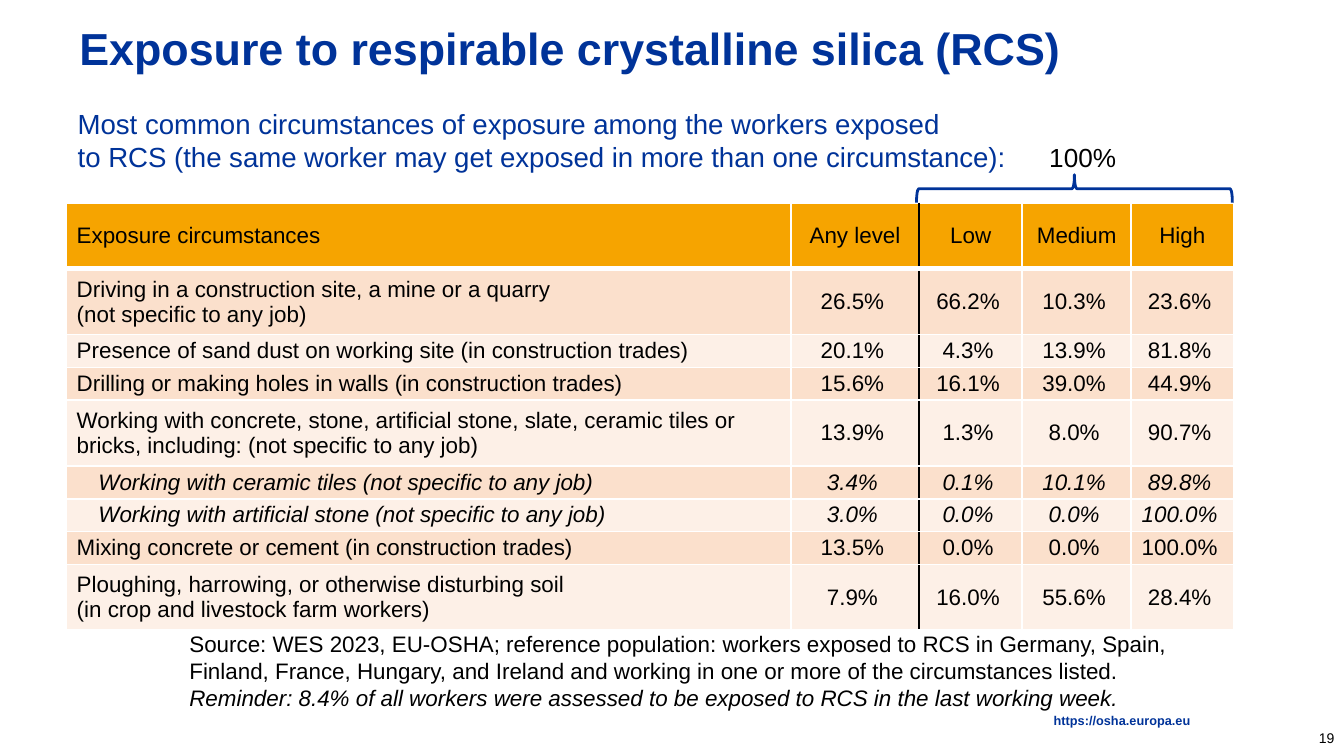
import lxml.etree
import pptx
import pptx.dml.color
import pptx.enum.shapes
import pptx.enum.text
import pptx.oxml.ns
import pptx.util

Cm = pptx.util.Cm
ALIGN = pptx.enum.text.PP_ALIGN
ANCHOR = pptx.enum.text.MSO_ANCHOR

THEME = {
    "font": "Arial",
    "blue": "003399", "black": "000000", "white": "FFFFFF",
    "head": "F6A400", "bands": ("FBE0CC", "FDF0E7"),
    "title": 24, "lead": 14.8, "label": 14, "body": 12, "page": 7.5, "link": 6.8,
}

WIDTHS = (13.7, 2.42, 1.95, 2.06, 1.93)
TALL, SHORT = 1.24, 0.62
HEADS = ("Exposure circumstances", "Any level", "Low", "Medium", "High")
ROWS = (
    (TALL, "Driving in a construction site, a mine or a quarry\n(not specific to any job)",
     "26.5%", "66.2%", "10.3%", "23.6%"),
    (SHORT, "Presence of sand dust on working site (in construction trades)",
     "20.1%", "4.3%", "13.9%", "81.8%"),
    (SHORT, "Drilling or making holes in walls (in construction trades)",
     "15.6%", "16.1%", "39.0%", "44.9%"),
    (TALL, "Working with concrete, stone, artificial stone, slate, ceramic tiles or bricks, "
     "including: (not specific to any job)", "13.9%", "1.3%", "8.0%", "90.7%"),
    (SHORT, "Working with ceramic tiles (not specific to any job)",
     "3.4%", "0.1%", "10.1%", "89.8%"),
    (SHORT, "Working with artificial stone (not specific to any job)",
     "3.0%", "0.0%", "0.0%", "100.0%"),
    (SHORT, "Mixing concrete or cement (in construction trades)",
     "13.5%", "0.0%", "0.0%", "100.0%"),
    (TALL, "Ploughing, harrowing, or otherwise disturbing soil\n(in crop and livestock farm workers)",
     "7.9%", "16.0%", "55.6%", "28.4%"),
)
SUBROWS = (5, 6)


def tint(name):
    return pptx.dml.color.RGBColor.from_string(name)


def assign(item, values):
    for key, value in values.items():
        setattr(item, key, value)


class Painter:
    def __init__(self, slide, theme):
        self.slide = slide
        self.theme = theme

    def letter(self, para, text, size, color, align=ALIGN.LEFT, **style):
        para.text = text
        para.alignment = align
        for run in para.runs:
            assign(run.font, {"name": self.theme["font"],
                              "size": pptx.util.Pt(self.theme[size]), **style})
            run.font.color.rgb = tint(self.theme[color])

    def text(self, box, lines, size, color, anchor=ANCHOR.MIDDLE, inset=(0.25, 0.13),
             space=1, **style):
        frame = self.slide.shapes.add_textbox(*map(Cm, box)).text_frame
        side, edge = map(Cm, inset)
        assign(frame, {"word_wrap": True, "vertical_anchor": anchor,
                       "margin_left": side, "margin_right": side,
                       "margin_top": edge, "margin_bottom": edge})
        for index, (line, extra) in enumerate(lines):
            para = frame.add_paragraph() if index else frame.paragraphs[0]
            self.letter(para, line, size, color, **style, **extra)
            if space != 1:
                para.line_spacing = space

    def border(self, cell, sides):
        props = cell._tc.get_or_add_tcPr()
        name = pptx.oxml.ns.qn
        for side, (color, width) in sides.items():
            line = lxml.etree.SubElement(props, name("a:ln" + side),
                                         w=str(pptx.util.Pt(width)))
            fill = lxml.etree.SubElement(line, name("a:solidFill"))
            lxml.etree.SubElement(fill, name("a:srgbClr"), val=self.theme[color])

    def cell(self, cell, text, row, col):
        head, first = row == 0, col == 0
        indent = 0.61 if row in SUBROWS else 0.2
        assign(cell, {"vertical_anchor": ANCHOR.MIDDLE,
                      "margin_left": Cm(indent if first else 0),
                      "margin_right": Cm(0 if head or first else 0.1),
                      "margin_top": 0, "margin_bottom": 0})
        self.letter(cell.text_frame.paragraphs[0], text, "body", "black",
                    ALIGN.LEFT if first else ALIGN.CENTER, italic=row in SUBROWS)
        self.border(cell, {"L": ("black" if col == 2 else "white", 1),
                           "R": ("black" if col == 1 else "white", 1),
                           "T": ("white", 1),
                           "B": ("white", 3 if head else 1)})
        cell.fill.solid()
        shade = self.theme["head"] if head else self.theme["bands"][(row - 1) % 2]
        cell.fill.fore_color.rgb = tint(shade)

    def table(self, left, top):
        rows = ((TALL, *HEADS), *ROWS)
        size = (sum(WIDTHS), sum(row[0] for row in rows))
        table = self.slide.shapes.add_table(
            len(rows), len(WIDTHS), *map(Cm, (left, top, *size))).table
        for column, width in zip(table.columns, WIDTHS):
            column.width = Cm(width)
        for row, (height, *texts) in enumerate(rows):
            table.rows[row].height = Cm(height)
            for col, text in enumerate(texts):
                self.cell(table.cell(row, col), text, row, col)

    def brace(self, box):
        shape = self.slide.shapes.add_shape(
            pptx.enum.shapes.MSO_SHAPE.LEFT_BRACE, *map(Cm, box))
        shape.rotation = 90
        shape.adjustments[0] = 0.08
        shape.adjustments[1] = 0.5
        shape.shadow.inherit = False
        shape.fill.background()
        shape.line.color.rgb = tint(self.theme["blue"])
        shape.line.width = pptx.util.Pt(1.5)


def main():
    deck = pptx.Presentation()
    assign(deck, {"slide_width": Cm(25.4), "slide_height": Cm(14.28)})
    paint = Painter(deck.slides.add_slide(deck.slide_layouts[6]), THEME)

    paint.text((23.7, 13.56, 1.7, 0.76), [("19", {})], "page", "black",
               inset=(0.18, 0.1), align=ALIGN.RIGHT)
    paint.text((6.3, 13.49, 16.2, 0.23), [("https://osha.europa.eu", {})], "link", "blue",
               ANCHOR.TOP, (0, 0), 0.9, align=ALIGN.RIGHT, bold=True)
    paint.text((1.25, 0.38, 21, 1.02),
               [("Exposure to respirable crystalline silica (RCS)", {})],
               "title", "blue", bold=True)
    paint.text((1.22, 1.88, 19.46, 1.52),
               [("Most common circumstances of exposure among the workers exposed\n"
                 "to RCS (the same worker may get exposed in more than one circumstance):", {})],
               "lead", "blue")
    paint.table(1.25, 3.84)
    paint.brace((20.04, 0.58, 0.53, 5.97))
    paint.text((19.58, 2.54, 2.64, 0.86), [("100%", {})], "label", "black", ANCHOR.TOP)
    paint.text((3.33, 11.76, 19.56, 1.8),
               [("Source: WES 2023, EU-OSHA; reference population: workers exposed to RCS in "
                 "Germany, Spain, Finland, France, Hungary, and Ireland and working in one or "
                 "more of the circumstances listed.", {}),
                ("Reminder: 8.4% of all workers were assessed to be exposed to RCS in the last "
                 "working week.", {"italic": True})],
               "body", "black")
    deck.save("out.pptx")


if __name__ == "__main__":
    main()
